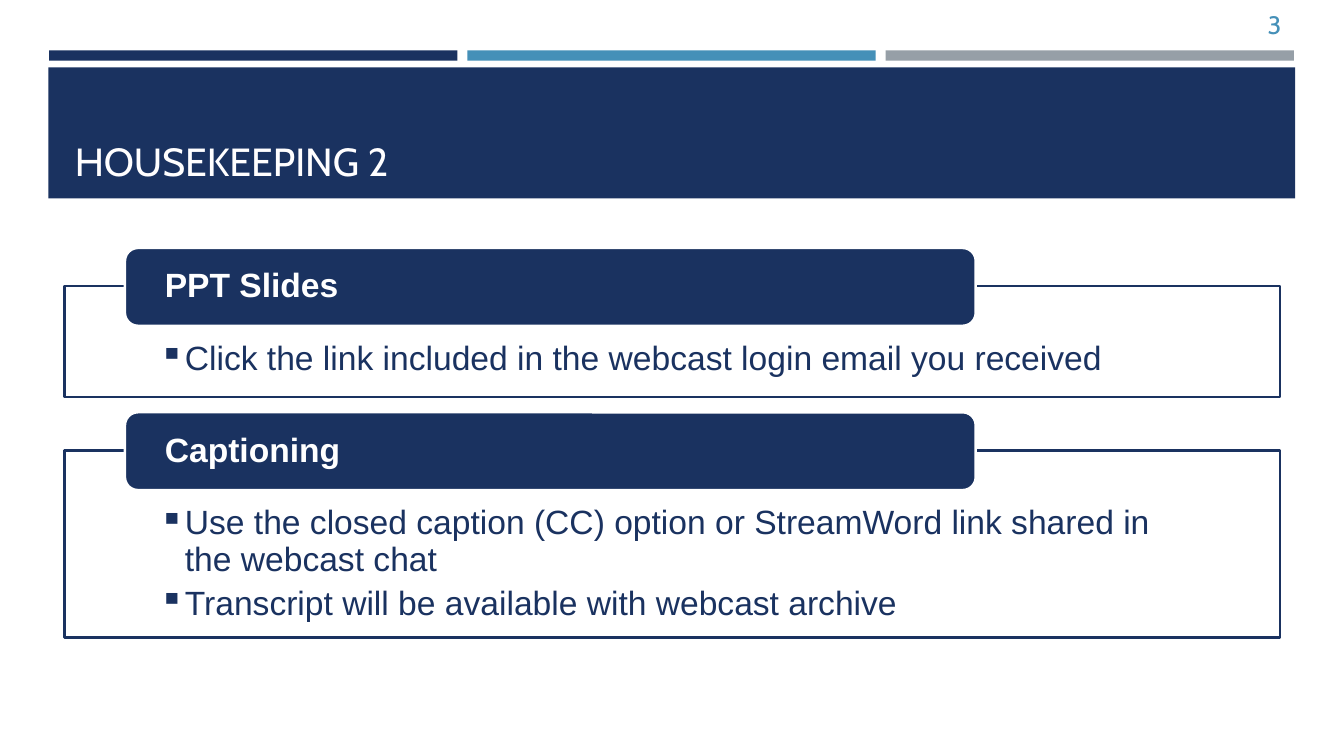
import pptx
import pptx.util
import pptx.dml.color
import pptx.enum.shapes
import pptx.enum.text
import pptx.oxml
import pptx.oxml.ns
from pptx.util import Cm, Pt

NAVY, BLUE, GREY, WHITE = "1A3260", "4590B8", "969FA7", "FFFFFF"
SHAPE = pptx.enum.shapes.MSO_SHAPE
ANCHOR = pptx.enum.text.MSO_ANCHOR
ALIGN = pptx.enum.text.PP_ALIGN

FRAME_LEFT, FRAME_WIDTH, FRAME_GAP = 1.63, 30.63, 1.35
TAB_RISE = 0.96
SECTIONS = [
    ("PPT Slides", 2.79,
     ["Click the link included in the webcast login email you received"]),
    ("Captioning", 4.72,
     ["Use the closed caption (CC) option or StreamWord link shared in the webcast chat",
      "Transcript will be available with webcast archive"]),
]


def rgb(color):
    return pptx.dml.color.RGBColor.from_string(color)


def format_font(p, name, size, color, bold=False):
    for r in p.runs:
        r.font.name, r.font.size, r.font.bold = name, Pt(size), bold
        r.font.color.rgb = rgb(color)


def set_margins(tf, left, top, right, bottom):
    tf.margin_left, tf.margin_top = Cm(left), Cm(top)
    tf.margin_right, tf.margin_bottom = Cm(right), Cm(bottom)


def add_box(s, kind, left, top, width, height, fill, line=None):
    sp = s.shapes.add_shape(kind, Cm(left), Cm(top), Cm(width), Cm(height))
    sp.shadow.inherit = False
    sp.fill.solid()
    sp.fill.fore_color.rgb = rgb(fill)
    if line:
        sp.line.color.rgb = rgb(line)
        sp.line.width = Pt(1.75)
    else:
        sp.line.fill.background()
    return sp


def set_opacity(sp, percent):
    color = sp.element.spPr.find(".//" + pptx.oxml.ns.qn("a:srgbClr"))
    color.append(pptx.oxml.parse_xml(
        f'<a:alpha {pptx.oxml.ns.nsdecls("a")} val="{percent * 1000}"/>'))


def add_bullet(p):
    pPr = p._p.get_or_add_pPr()
    pPr.set("marL", str(Cm(0.64)))
    pPr.set("indent", str(-Cm(0.64)))
    pPr.append(pptx.oxml.parse_xml(
        f'<a:buChar {pptx.oxml.ns.nsdecls("a")} char="▪"/>'))


def add_section(s, top, height, heading, items):
    # Frame with its bullets
    frame = add_box(s, SHAPE.RECTANGLE, FRAME_LEFT, top, FRAME_WIDTH, height, WHITE, NAVY)
    set_opacity(frame, 90)
    tf = frame.text_frame
    tf.word_wrap = True
    tf.vertical_anchor = ANCHOR.TOP
    set_margins(tf, 2.39, 1.4, 2.39, 0.48)
    tf.text = "\n".join(items)
    for p in tf.paragraphs:
        add_bullet(p)
        p.alignment = ALIGN.LEFT
        p.line_spacing = 0.9
        p.space_after = Pt(6)
        format_font(p, "Arial", 24, NAVY)

    # Heading tab over the frame's top edge
    tab = add_box(s, SHAPE.ROUNDED_RECTANGLE, 3.15, top - TAB_RISE, 21.44, 1.96, NAVY, WHITE)
    tf = tab.text_frame
    tf.word_wrap = True
    tf.vertical_anchor = ANCHOR.MIDDLE
    set_margins(tf, 0.91, 0, 0.91, 0)
    tf.text = heading
    p = tf.paragraphs[0]
    p.alignment = ALIGN.LEFT
    p.line_spacing = 0.9
    format_font(p, "Arial", 24, WHITE, bold=True)


def add_title(s, text):
    band = add_box(s, SHAPE.RECTANGLE, 1.22, 1.7, 31.42, 3.3, NAVY)
    title = s.shapes.title
    band.element.addnext(title.element)
    title.left, title.top, title.width, title.height = Cm(1.63), Cm(1.96), Cm(30.63), Cm(2.82)
    tf = title.text_frame
    tf.text = text
    tf.auto_size = pptx.enum.text.MSO_AUTO_SIZE.NONE
    tf.vertical_anchor = ANCHOR.BOTTOM
    p = tf.paragraphs[0]
    p.alignment = ALIGN.LEFT
    format_font(p, "Cabin", 28, "FFFEFF")


def add_page_number(s, text):
    tf = s.shapes.add_textbox(Cm(29.62), Cm(0.15), Cm(2.92), Cm(1.02)).text_frame
    tf.word_wrap = True
    tf.vertical_anchor = ANCHOR.MIDDLE
    tf.text = text
    p = tf.paragraphs[0]
    p.alignment = ALIGN.RIGHT
    p.line_spacing = 0.9
    format_font(p, "Cabin", 18, BLUE)


def main():
    prs = pptx.Presentation()
    prs.slide_width, prs.slide_height = Cm(33.87), Cm(19.05)
    s = prs.slides.add_slide(prs.slide_layouts[5])

    # Header: three bars, title band, page number
    for i, color in enumerate([NAVY, BLUE, GREY]):
        add_box(s, SHAPE.RECTANGLE, 1.24 + i * 10.54, 1.27, 10.29, 0.26, color)
    add_title(s, "HOUSEKEEPING 2")
    add_page_number(s, "3")

    # Stacked sections
    top = 7.21
    for heading, height, items in SECTIONS:
        add_section(s, top, height, heading, items)
        top += height + FRAME_GAP

    prs.save("out.pptx")


if __name__ == "__main__":
    main()
